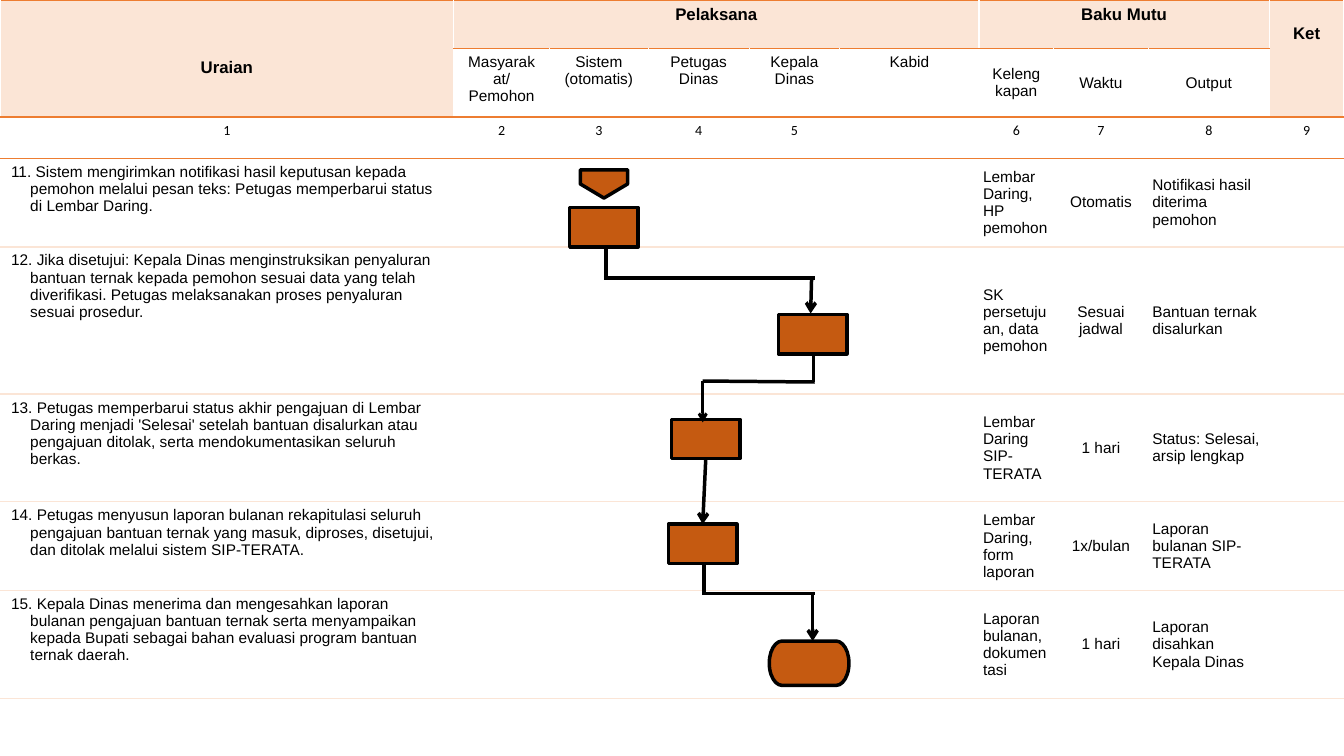
from lxml.etree import SubElement
from pptx import Presentation
from pptx.dml.color import RGBColor
from pptx.enum.shapes import MSO_CONNECTOR, MSO_SHAPE
from pptx.enum.text import MSO_ANCHOR, PP_ALIGN
from pptx.oxml.ns import qn
from pptx.util import Inches, Pt

COLORS = {"peach": "FBE5D6", "orange": "ED7D31", "rust": "C55A11",
          "white": "FFFFFF", "black": "000000"}
COLS = [4.5, 0.95, 0.98, 1, 0.9, 1.38, 0.74, 0.94, 1.2, 0.74]
ROWS = [0.48, 0.68, 0.41, 0.88, 1.46, 1.07, 0.88, 1.07]
HEADER_ROWS = 3

# Top header cells: row, column, last row, last column, text
GROUPS = [(0, 0, 1, 0, "Uraian"), (0, 1, 0, 5, "Pelaksana"),
          (0, 6, 0, 8, "Baku Mutu"), (0, 9, 1, 9, "Ket")]
SUBHEADS = ["Masyarakat/Pemohon", "Sistem (otomatis)", "Petugas Dinas",
            "Kepala Dinas", "Kabid", "Kelengkapan", "Waktu", "Output"]
NUMBERS = ["1", "2", "3", "4", "5", "", "6", "7", "8", "9"]

# Activity, requirements, time, output
ACTIVITIES = [
    ("11. Sistem mengirimkan notifikasi hasil keputusan kepada pemohon melalui "
     "pesan teks: Petugas memperbarui status di Lembar Daring.",
     "Lembar Daring, HP pemohon", "Otomatis", "Notifikasi hasil diterima pemohon"),
    ("12. Jika disetujui: Kepala Dinas menginstruksikan penyaluran bantuan ternak "
     "kepada pemohon sesuai data yang telah diverifikasi. Petugas melaksanakan "
     "proses penyaluran sesuai prosedur.",
     "SK persetujuan, data pemohon", "Sesuai jadwal", "Bantuan ternak disalurkan"),
    ("13. Petugas memperbarui status akhir pengajuan di Lembar Daring menjadi "
     "'Selesai' setelah bantuan disalurkan atau pengajuan ditolak, serta "
     "mendokumentasikan seluruh berkas.",
     "Lembar Daring SIP-TERATA", "1 hari", "Status: Selesai, arsip lengkap"),
    ("14. Petugas menyusun laporan bulanan rekapitulasi seluruh pengajuan bantuan "
     "ternak yang masuk, diproses, disetujui, dan ditolak melalui sistem SIP-TERATA.",
     "Lembar Daring, form laporan", "1x/bulan", "Laporan bulanan SIP-TERATA"),
    ("15. Kepala Dinas menerima dan mengesahkan laporan bulanan pengajuan bantuan "
     "ternak serta menyampaikan kepada Bupati sebagai bahan evaluasi program "
     "bantuan ternak daerah.",
     "Laporan bulanan, dokumentasi", "1 hari", "Laporan disahkan Kepala Dinas"),
]

# Flow symbols, relative to the flow area: shape, left, top, width, height, rotation
STEP = (0.68, 0.39)
SYMBOLS = [
    (MSO_SHAPE.PENTAGON, 1.35, 0.02, 0.28, 0.47, 90),
    (MSO_SHAPE.RECTANGLE, 1.15, 0.49, *STEP, 0),
    (MSO_SHAPE.RECTANGLE, 3.22, 1.55, *STEP, 0),
    (MSO_SHAPE.RECTANGLE, 2.16, 2.59, *STEP, 0),
    (MSO_SHAPE.RECTANGLE, 2.13, 3.63, *STEP, 0),
    (MSO_SHAPE.FLOWCHART_TERMINATOR, 3.13, 4.79, 0.79, 0.44, 0),
]
# Each route ends in an arrow: x1, y1, x2, y2, line width
ROUTES = [
    [(1.49, 1.19, 3.58, 1.19, 2.5), (1.51, 0.9, 1.51, 1.21, 2.5),
     (3.55, 1.17, 3.54, 1.54, 2.5)],
    [(3.58, 2.22, 2.47, 2.21, 2.5), (3.57, 1.93, 3.57, 2.22, 2.5),
     (2.47, 2.21, 2.47, 2.62, 2)],
    [(2.5, 2.98, 2.47, 3.63, 2.5)],
    [(2.47, 4.32, 3.58, 4.32, 2.5), (2.48, 4.03, 2.48, 4.33, 2.5),
     (3.56, 4.3, 3.56, 4.79, 2.5)],
]


def rgb(name):
    return RGBColor.from_string(COLORS[name])


def style_cell(cell, fill, top, bottom, inset=(0.11, 0.05)):
    tcPr = cell._tc.get_or_add_tcPr()
    for side, color in (("L", "white"), ("R", "white"), ("T", top), ("B", bottom)):
        ln = SubElement(tcPr, qn(f"a:ln{side}"), w=str(Pt(1)))
        SubElement(SubElement(ln, qn("a:solidFill")), qn("a:srgbClr"), val=COLORS[color])
    cell.fill.solid()
    cell.fill.fore_color.rgb = rgb(fill)
    cell.margin_left = cell.margin_right = Inches(inset[0])
    cell.margin_top = cell.margin_bottom = Inches(inset[1])


def write(cell, text, size=11, font="Arial", bold=False,
          align=PP_ALIGN.CENTER, anchor=MSO_ANCHOR.TOP):
    cell.vertical_anchor = anchor
    p = cell.text_frame.paragraphs[0]
    p.alignment = align
    r = p.add_run()
    r.text = text
    r.font.size, r.font.name, r.font.bold = Pt(size), font, bold
    r.font.color.rgb = rgb("black")
    return p


def fill_header(table):
    for row, col, last_row, last_col, text in GROUPS:
        cell = table.cell(row, col)
        cell.merge(table.cell(last_row, last_col))
        anchor = MSO_ANCHOR.MIDDLE if col == 0 else MSO_ANCHOR.TOP
        write(cell, text, size=12, bold=True, anchor=anchor)
        if last_row > row:
            cell.margin_top = Inches(0.24)
    for col, text in enumerate(SUBHEADS, 1):
        anchor = MSO_ANCHOR.MIDDLE if col > 5 else MSO_ANCHOR.TOP
        write(table.cell(1, col), text, anchor=anchor)
    for col, text in enumerate(NUMBERS):
        if text:
            write(table.cell(2, col), text, size=10, font="Calibri")


def fill_activities(table):
    for row, (activity, *quality) in enumerate(ACTIVITIES, HEADER_ROWS):
        p = write(table.cell(row, 0), activity, align=PP_ALIGN.LEFT)
        pPr = p._p.get_or_add_pPr()
        pPr.set("marL", str(Inches(0.19)))
        pPr.set("indent", str(-Inches(0.19)))
        for col, text in enumerate(quality, 6):
            align = PP_ALIGN.CENTER if col == 7 else PP_ALIGN.LEFT
            write(table.cell(row, col), text, align=align, anchor=MSO_ANCHOR.MIDDLE)


def add_procedure_table(slide, left, top):
    table = slide.shapes.add_table(
        len(ROWS), len(COLS), Inches(left), Inches(top),
        Inches(sum(COLS)), Inches(sum(ROWS))).table
    table.first_row = table.horz_banding = False
    for column, width in zip(table.columns, COLS):
        column.width = Inches(width)
    for row, height in zip(table.rows, ROWS):
        row.height = Inches(height)
    for i in range(len(ROWS)):
        for j in range(len(COLS)):
            shaded = i == 0 or (i == 1 and j in (0, 9))
            style_cell(table.cell(i, j), "peach" if shaded else "white",
                       "orange" if i <= HEADER_ROWS else "peach",
                       "orange" if i < HEADER_ROWS else "peach",
                       (0.04, 0.03) if i >= HEADER_ROWS and j in (6, 7, 8) else (0.11, 0.05))
    fill_header(table)
    fill_activities(table)


def add_line(shapes, x1, y1, x2, y2, width, arrow):
    line = shapes.add_connector(MSO_CONNECTOR.STRAIGHT, Inches(x1), Inches(y1),
                                Inches(x2), Inches(y2))
    line.line.color.rgb = rgb("black")
    line.line.width = Pt(width)
    if arrow:
        SubElement(line.line._get_or_add_ln(), qn("a:tailEnd"), type="arrow")
    SubElement(line._element.spPr, qn("a:effectLst"))


def add_flow(slide, left, top):
    # Step symbols
    for kind, x, y, w, h, rotation in SYMBOLS:
        sp = slide.shapes.add_shape(kind, Inches(left + x), Inches(top + y),
                                    Inches(w), Inches(h))
        sp.rotation = rotation
        sp.shadow.inherit = False
        sp.fill.solid()
        sp.fill.fore_color.rgb = rgb("rust")
        sp.line.color.rgb = rgb("black")
        sp.line.width = Pt(2.5)
    # Arrow routes between steps
    for route in ROUTES:
        shapes = slide.shapes.add_group_shape().shapes if len(route) > 1 else slide.shapes
        for i, (x1, y1, x2, y2, width) in enumerate(route, 1):
            add_line(shapes, left + x1, top + y1, left + x2, top + y2,
                     width, arrow=i == len(route))


def main():
    prs = Presentation()
    prs.slide_width, prs.slide_height = Inches(13.33), Inches(7.5)
    slide = prs.slides.add_slide(prs.slide_layouts[6])
    add_procedure_table(slide, 0, 0)
    add_flow(slide, COLS[0], sum(ROWS[:HEADER_ROWS]))
    prs.save("out.pptx")


if __name__ == "__main__":
    main()
